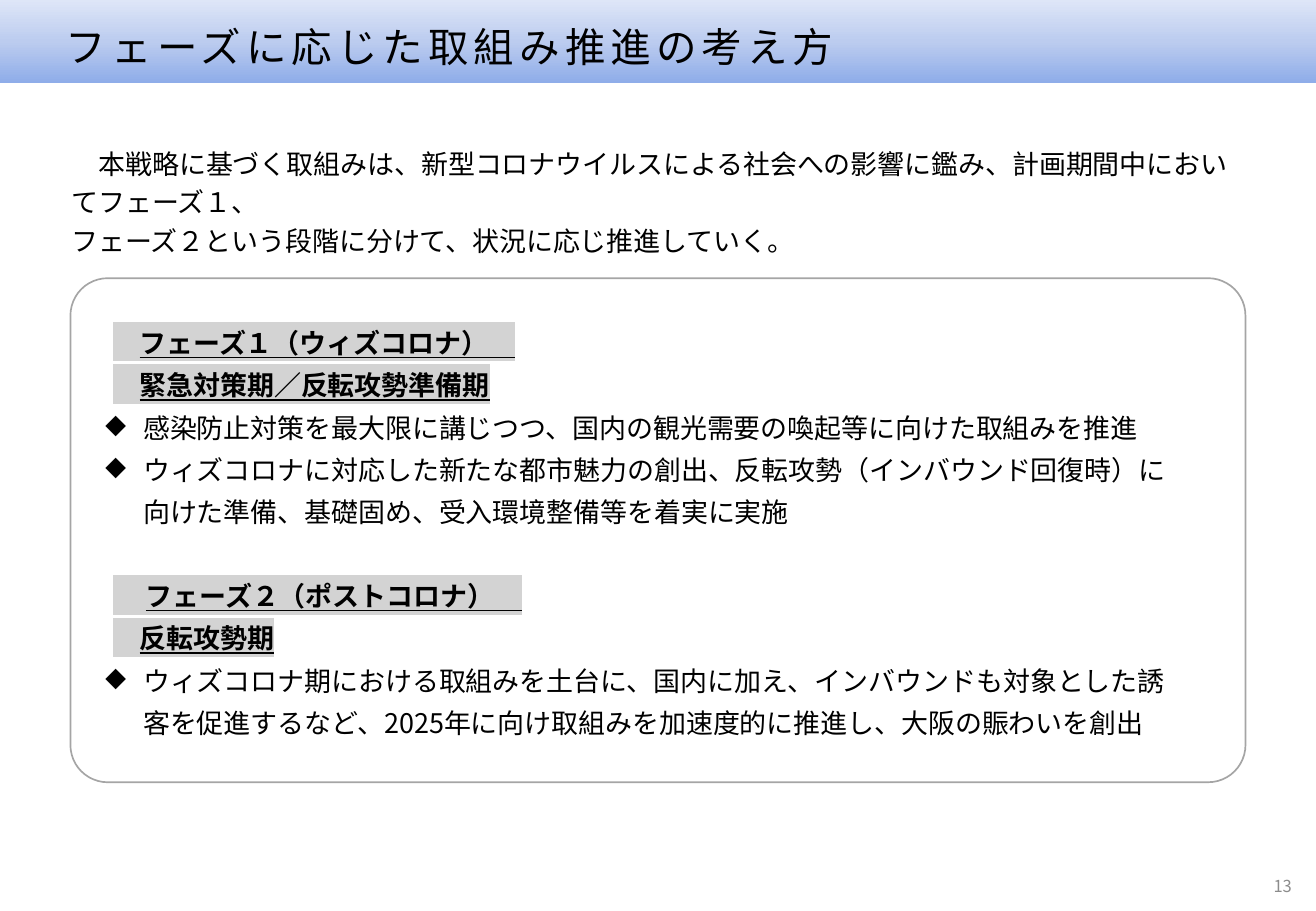
from dataclasses import dataclass

from lxml import etree
from pptx import Presentation
from pptx import util as u
from pptx.dml.color import RGBColor
from pptx.enum import shapes, text
from pptx.oxml.ns import qn


@dataclass(frozen=True)
class Theme:
    font: str = "Noto Sans CJK JP"
    ink: str = "000000"
    muted: str = "8C8C8C"
    border: str = "A5A5A5"
    highlight: str = "D3D3D3"
    banner: tuple[str, ...] = ("8FADE9", "BCCCEF", "DEE6F7")
    title_size: float = 24
    title_indent_size: float = 32
    body_size: float = 16
    number_size: float = 9.8


@dataclass(frozen=True)
class Box:
    left: float
    top: float
    width: float
    height: float

    def lengths(self) -> list[u.Length]:
        return [u.Inches(n) for n in (self.left, self.top, self.width, self.height)]


@dataclass(frozen=True)
class Phase:
    headings: tuple[tuple[str, str], ...]  # plain lead, underlined words
    points: tuple[str, ...]


THEME = Theme()
PHASE_LINE = 25
INTRO_LINE = 23

TITLE = "フェーズに応じた取組み推進の考え方"
INTRO = (
    "　本戦略に基づく取組みは、新型コロナウイルスによる社会への影響に鑑み、計画期間中においてフェーズ１、",
    "フェーズ２という段階に分けて、状況に応じ推進していく。",
)
PHASES = (
    Phase(
        (("　", "フェーズ１（ウィズコロナ）　"), ("　", "緊急対策期／反転攻勢準備期")),
        (
            "感染防止対策を最大限に講じつつ、国内の観光需要の喚起等に向けた取組みを推進",
            "ウィズコロナに対応した新たな都市魅力の創出、反転攻勢（インバウンド回復時）に"
            "向けた準備、基礎固め、受入環境整備等を着実に実施",
        ),
    ),
    Phase(
        ((" 　", "フェーズ２（ポストコロナ）　"), ("　", "反転攻勢期")),
        (
            "ウィズコロナ期における取組みを土台に、国内に加え、インバウンドも対象とした誘"
            "客を促進するなど、2025年に向け取組みを加速度的に推進し、大阪の賑わいを創出",
        ),
    ),
)


def style_font(font, size: float, color: str = THEME.ink, bold: bool = False) -> None:
    font.name = THEME.font
    font.size = u.Pt(size)
    font.bold = bold
    font.color.rgb = RGBColor.from_string(color)
    latin = font._rPr.find(qn("a:latin"))
    east_asian = etree.Element(qn("a:ea"), typeface=THEME.font)
    latin.addnext(east_asian)


def set_indent(paragraph, margin: float, hanging: float = 0) -> None:
    properties = paragraph._p.get_or_add_pPr()
    properties.set("marL", str(u.Inches(margin)))
    properties.set("indent", str(u.Inches(-hanging)))


def add_bullet(paragraph, symbol: str) -> None:
    bullet = etree.Element(qn("a:buChar"), char=symbol)
    paragraph._p.pPr.find(qn("a:defRPr")).addprevious(bullet)


def highlight(run) -> None:
    mark = etree.Element(qn("a:highlight"))
    etree.SubElement(mark, qn("a:srgbClr"), val=THEME.highlight)
    run._r.get_or_add_rPr().insert(0, mark)


def add_text_box(slide, box: Box):
    frame = slide.shapes.add_textbox(*box.lengths()).text_frame
    frame.word_wrap = True
    return frame


def next_paragraph(frame, line_points: float):
    first = frame.paragraphs[0]
    paragraph = frame.add_paragraph() if first.runs else first
    paragraph.line_spacing = u.Pt(line_points)
    return paragraph


def add_panel(slide, box: Box) -> None:
    panel = slide.shapes.add_shape(shapes.MSO_SHAPE.ROUNDED_RECTANGLE, *box.lengths())
    panel.adjustments[0] = 0.074
    panel.shadow.inherit = False
    panel.fill.background()
    panel.line.color.rgb = RGBColor.from_string(THEME.border)
    panel.line.width = u.Pt(1)


def add_banner(slide, box: Box, title: str) -> None:
    banner = slide.shapes.add_shape(shapes.MSO_SHAPE.RECTANGLE, *box.lengths())
    banner.shadow.inherit = False
    banner.line.fill.background()

    # Three even stops, running from bottom to top
    banner.fill.gradient()
    banner.fill.gradient_angle = 90
    stops = banner._element.spPr.find(".//" + qn("a:gsLst"))
    stops.clear()
    for index, color in enumerate(THEME.banner):
        stop = etree.SubElement(stops, qn("a:gs"), pos=str(index * 50000))
        etree.SubElement(stop, qn("a:srgbClr"), val=color)

    frame = banner.text_frame
    frame.vertical_anchor = text.MSO_ANCHOR.MIDDLE
    paragraph = frame.paragraphs[0]
    paragraph.alignment = text.PP_ALIGN.LEFT
    for words, size in (("　", THEME.title_indent_size), (title, THEME.title_size)):
        run = paragraph.add_run()
        run.text = words
        style_font(run.font, size)
    run._r.rPr.set("spc", "300")


def add_intro(slide, box: Box) -> None:
    frame = add_text_box(slide, box)
    for sentence in INTRO:
        paragraph = next_paragraph(frame, INTRO_LINE)
        paragraph.add_run().text = sentence
        style_font(paragraph.font, THEME.body_size)


def add_phases(slide, box: Box) -> None:
    frame = add_text_box(slide, box)
    for phase_index, phase in enumerate(PHASES):
        for heading_index, heading in enumerate(phase.headings):
            paragraph = next_paragraph(frame, PHASE_LINE)
            set_indent(paragraph, 0.06)
            if phase_index and not heading_index:
                paragraph.space_before = u.Pt(PHASE_LINE)
            for words, underlined in zip(heading, (False, True)):
                run = paragraph.add_run()
                run.text = words
                run.font.underline = underlined
                highlight(run)
            style_font(paragraph.font, THEME.body_size, bold=True)
        for point in phase.points:
            paragraph = next_paragraph(frame, PHASE_LINE)
            set_indent(paragraph, 0.31, hanging=0.31)
            paragraph.add_run().text = point
            style_font(paragraph.font, THEME.body_size)
            add_bullet(paragraph, "◆")


def add_page_number(slide, box: Box, number: int) -> None:
    frame = add_text_box(slide, box)
    frame.vertical_anchor = text.MSO_ANCHOR.MIDDLE
    paragraph = frame.paragraphs[0]
    paragraph.alignment = text.PP_ALIGN.RIGHT
    paragraph.add_run().text = str(number)
    style_font(paragraph.font, THEME.number_size, THEME.muted)


def main() -> None:
    presentation = Presentation()
    presentation.slide_width = u.Inches(10.83)
    presentation.slide_height = u.Inches(7.5)
    slide = presentation.slides.add_slide(presentation.slide_layouts[6])

    add_page_number(slide, Box(8.29, 7.09, 2.44, 0.4), 13)
    add_panel(slide, Box(0.58, 2.29, 9.67, 4.15))
    add_phases(slide, Box(0.77, 2.56, 9.04, 3.61))
    add_banner(slide, Box(0, 0, 10.83, 0.68), TITLE)
    add_intro(slide, Box(0.49, 1.11, 9.75, 0.75))

    presentation.save("out.pptx")


if __name__ == "__main__":
    main()
